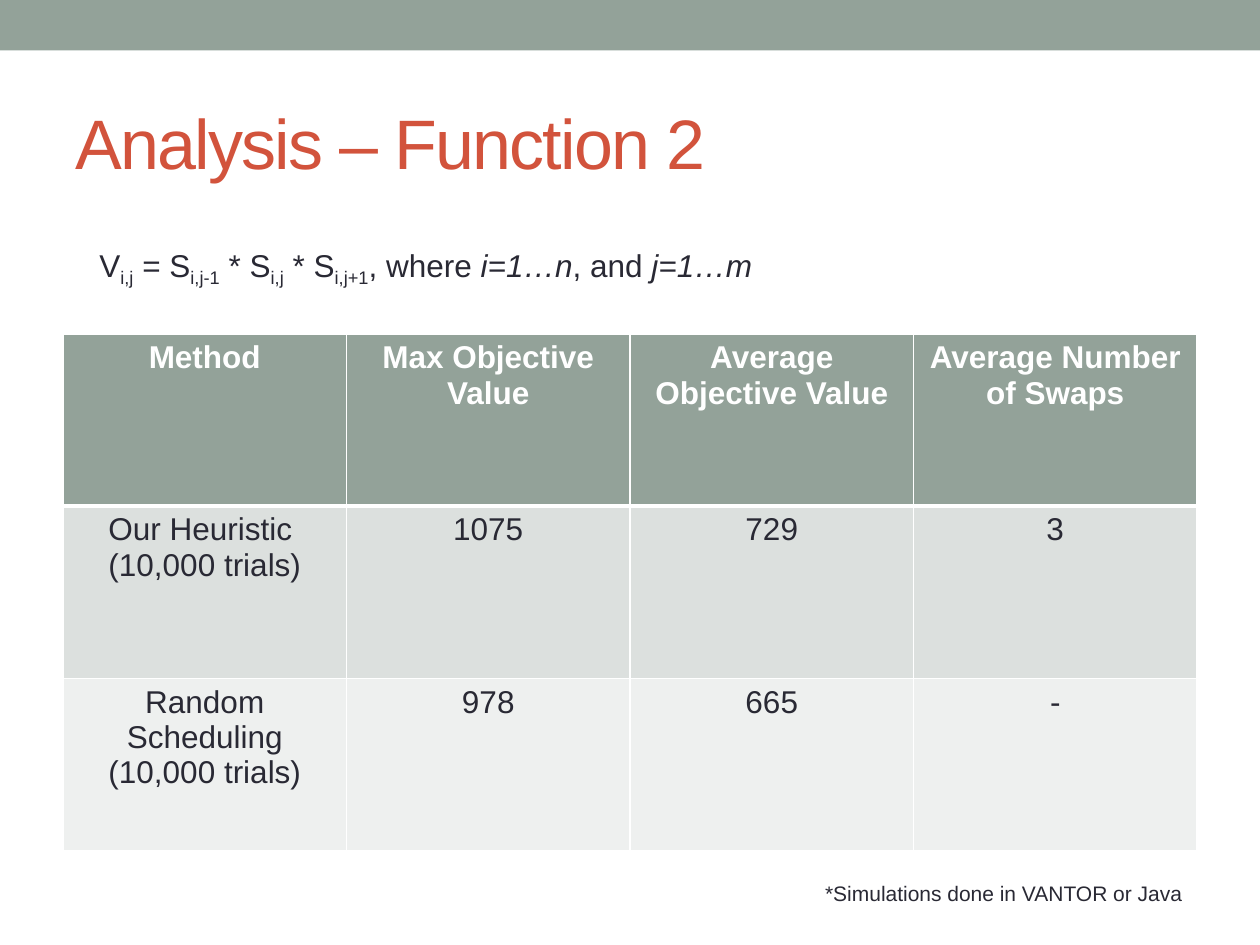
import pptx
import pptx.dml.color
import pptx.enum.shapes
import pptx.enum.text
import pptx.oxml.ns
import pptx.util
from lxml import etree

Inches = pptx.util.Inches
Pt = pptx.util.Pt
ALIGN = pptx.enum.text.PP_ALIGN
ANCHOR = pptx.enum.text.MSO_ANCHOR

SAGE, RUST, INK, WHITE = "93A299", "D2533C", "292934", "FFFFFF"
ROW_FILLS = [SAGE, "DCE0DE", "EEF0EF"]
RESULTS = [
    ["Method", "Max Objective Value", "Average Objective Value", "Average Number of Swaps"],
    ["Our Heuristic \n(10,000 trials)", "1075", "729", "3"],
    ["Random Scheduling (10,000 trials)", "978", "665", "-"],
]
FORMULA = [
    ("V", ""), ("i,j", "sub"), (" = S", ""), ("i,j-1", "sub"), (" * S", ""),
    ("i,j", "sub"), (" * S", ""), ("i,j+1", "sub"), (", where ", ""),
    ("i=1…n", "italic"), (", and ", ""), ("j=1…m", "italic"),
]


def color(hex_string):
    return pptx.dml.color.RGBColor.from_string(hex_string)


def fill_solid(item, hex_string):
    item.fill.solid()
    item.fill.fore_color.rgb = color(hex_string)


def border_cell(cell, bottom_width):
    """Draw white lines round a cell; call before filling, as lines come first in the XML."""
    properties = cell._tc.get_or_add_tcPr()
    qn = pptx.oxml.ns.qn
    widths = {"a:lnL": 1, "a:lnR": 1, "a:lnT": 1, "a:lnB": bottom_width}
    for tag, width in widths.items():
        line = etree.SubElement(properties, qn(tag), w=str(Pt(width)))
        solid = etree.SubElement(line, qn("a:solidFill"))
        etree.SubElement(solid, qn("a:srgbClr"), val=WHITE)


class SlideWriter:
    font = "Arial"

    def __init__(self, slide):
        self.slide = slide

    def style(self, span, size, hex_string, bold=False):
        span.font.name = self.font
        span.font.size = Pt(size)
        span.font.bold = bold
        span.font.color.rgb = color(hex_string)

    def bar(self, left, top, width, height, hex_string):
        shape = self.slide.shapes.add_shape(
            pptx.enum.shapes.MSO_SHAPE.RECTANGLE,
            Inches(left), Inches(top), Inches(width), Inches(height))
        shape.shadow.inherit = False
        fill_solid(shape, hex_string)
        shape.line.fill.background()

    def text(self, left, top, width, height, parts, size, hex_string,
             wrap=False, anchor=ANCHOR.TOP, spacing=0):
        """Add one line of (text, kind) parts; kind is "sub", "italic" or empty."""
        box = self.slide.shapes.add_textbox(
            Inches(left), Inches(top), Inches(width), Inches(height))
        frame = box.text_frame
        frame.word_wrap = wrap
        frame.vertical_anchor = anchor
        for content, kind in parts:
            span = frame.paragraphs[0].add_run()
            span.text = content
            self.style(span, size, hex_string)
            span.font.italic = kind == "italic"
            properties = span.font._element
            if kind == "sub":
                properties.set("baseline", "-25000")
            if spacing:
                properties.set("spc", str(spacing * 100))

    def table(self, left, top, width, height, rows, fills):
        """Add a table whose first row is the header."""
        table = self.slide.shapes.add_table(
            len(rows), len(rows[0]),
            Inches(left), Inches(top), Inches(width), Inches(height)).table
        for row_index, values in enumerate(rows):
            header = row_index == 0
            for column_index, value in enumerate(values):
                cell = table.cell(row_index, column_index)
                border_cell(cell, 3 if header else 1)
                fill_solid(cell, fills[row_index])
                cell.text_frame.text = value
                for para in cell.text_frame.paragraphs:
                    para.alignment = ALIGN.CENTER
                    for span in para.runs:
                        self.style(span, 18, WHITE if header else INK, header)


def main():
    deck = pptx.Presentation()
    deck.slide_width, deck.slide_height = Inches(10), Inches(7.5)
    page = SlideWriter(deck.slides.add_slide(deck.slide_layouts[6]))

    page.bar(0, 0, 10, 0.4, SAGE)
    page.text(0.5, 0.58, 9, 1.08, [("Analysis – Function 2", "")], 40, RUST,
              wrap=True, anchor=ANCHOR.MIDDLE, spacing=-1)
    page.table(0.5, 2.65, 9, 4.1, RESULTS, ROW_FILLS)
    page.text(6.45, 6.94, 3.08, 0.3,
              [("*Simulations done in VANTOR or Java", "")], 12, INK)
    page.text(0.69, 1.9, 5.56, 0.4, FORMULA, 18, INK)

    deck.save("out.pptx")


if __name__ == "__main__":
    main()
